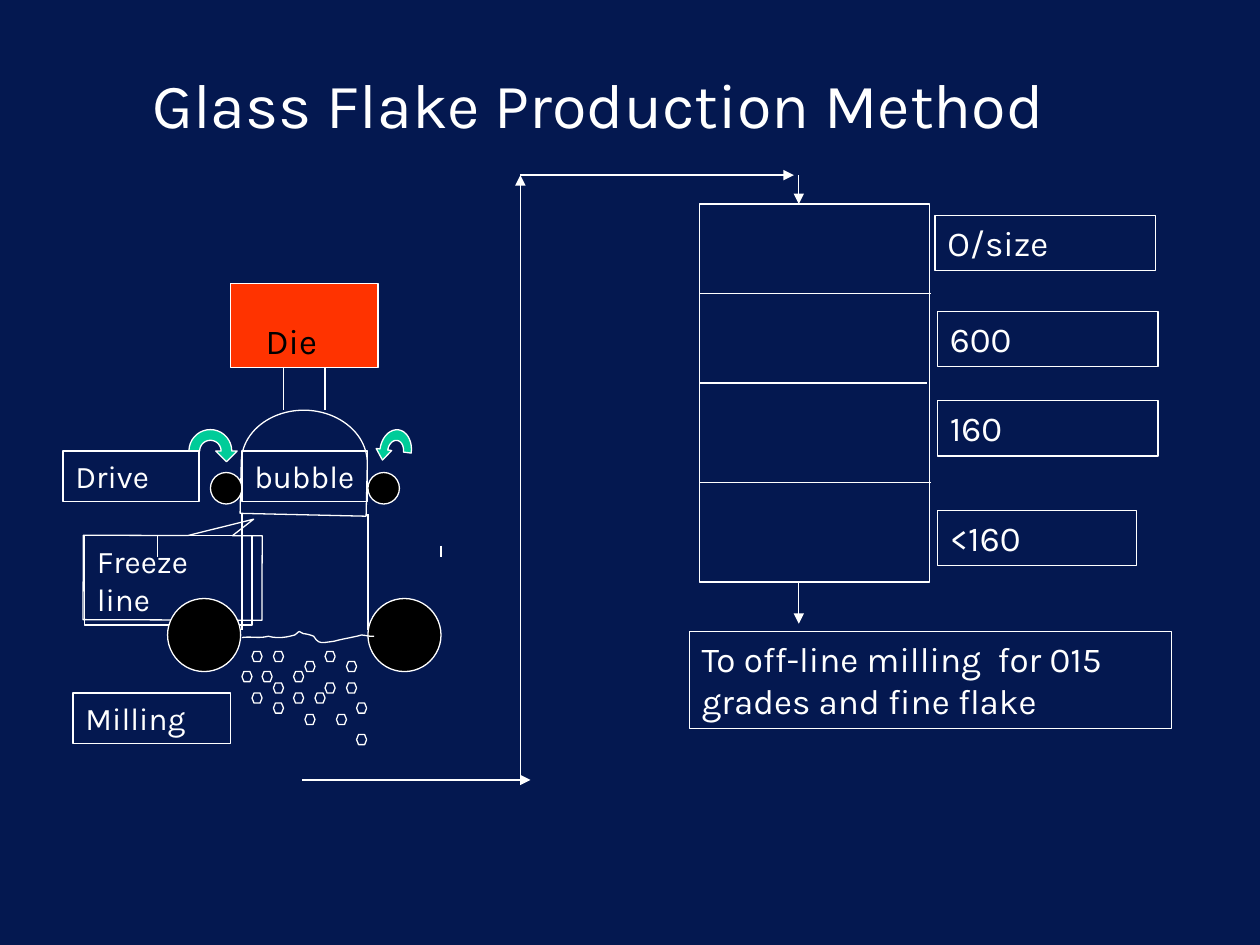
import math
from typing import NamedTuple, Optional

import pptx
import pptx.dml.color
import pptx.enum.shapes
import pptx.enum.text
import pptx.oxml
import pptx.oxml.ns
import pptx.util

Inches = pptx.util.Inches
SHAPES = pptx.enum.shapes.MSO_SHAPE
FONT = "Karla"
COLORS = {
    "background": "041850",
    "white": "FFFFFF",
    "black": "000000",
    "die": "FF3300",
    "arrow": "00CC99",
}


class Box(NamedTuple):
    left: float
    top: float
    width: float
    height: float


class Label(NamedTuple):
    text: str
    box: Box
    size: int = 18


class Line(NamedTuple):
    start: tuple[float, float]
    end: tuple[float, float]
    arrow: bool = False


def color(name: str):
    return pptx.dml.color.RGBColor.from_string(COLORS[name])


def lengths(values) -> list[int]:
    return [Inches(value) for value in values]


def style_shape(shape, fill: Optional[str] = None) -> None:
    shape.shadow.inherit = False
    if fill:
        shape.fill.solid()
        shape.fill.fore_color.rgb = color(fill)
    else:
        shape.fill.background()
    shape.line.color.rgb = color("white")
    shape.line.width = pptx.util.Pt(0.75)


def add_shape(slide, kind, box: Box, fill: Optional[str] = None, rotation: float = 0):
    shape = slide.shapes.add_shape(kind, *lengths(box))
    style_shape(shape, fill)
    shape.rotation = rotation
    return shape


def write_text(shape, text: str, size: int, font_color: str = "white") -> None:
    frame = shape.text_frame
    frame.text = text
    frame.word_wrap = True
    frame.auto_size = pptx.enum.text.MSO_AUTO_SIZE.SHAPE_TO_FIT_TEXT
    frame.vertical_anchor = pptx.enum.text.MSO_ANCHOR.TOP
    paragraph = frame.paragraphs[0]
    paragraph.alignment = pptx.enum.text.PP_ALIGN.LEFT
    font = paragraph.runs[0].font
    font.name, font.size = FONT, pptx.util.Pt(size)
    font.color.rgb = color(font_color)


def add_label(slide, label: Label) -> None:
    shape = add_shape(slide, SHAPES.RECTANGLE, label.box)
    write_text(shape, label.text, label.size)


def add_line(slide, line: Line) -> None:
    connector = slide.shapes.add_connector(
        pptx.enum.shapes.MSO_CONNECTOR.STRAIGHT, *lengths(line.start + line.end))
    connector.line.color.rgb = color("white")
    connector.line.width = pptx.util.Pt(0.75)
    if connector.line.fill is not None and line.arrow:
        outline = connector.line._get_or_add_ln()
        outline.append(pptx.oxml.parse_xml(
            f'<a:tailEnd {pptx.oxml.ns.nsdecls("a")} type="triangle"/>'))
    connector._element.spPr.append(pptx.oxml.parse_xml(
        f'<a:effectLst {pptx.oxml.ns.nsdecls("a")}/>'))


def add_outline(slide, points, close: bool, fill: Optional[str] = None) -> None:
    start, *others = [tuple(lengths(point)) for point in points]
    builder = slide.shapes.build_freeform(*start)
    builder.add_line_segments(others, close=close)
    style_shape(builder.convert_to_shape(), fill)


def add_turn_arrow(slide, center: tuple[float, float], radius_x: float,
                   mirror: int = 1, rotation: float = 0) -> None:
    """Draw a half-circle arrow, in units of its outer radius, then place it."""
    angles = [math.radians(degrees) for degrees in range(0, 181, 10)]
    outline = [(math.cos(a) / 2, -math.sin(a) / 2) for a in angles]
    outline += [(math.cos(a), -math.sin(a)) for a in reversed(angles)]
    outline += [(1.25, 0), (0.75, 0.5), (0.25, 0)]
    turn = math.radians(rotation)
    points = []
    for x, y in outline:
        x, y = x * radius_x * mirror, y * 0.17
        points.append((center[0] + x * math.cos(turn) - y * math.sin(turn),
                       center[1] + x * math.sin(turn) + y * math.cos(turn)))
    add_outline(slide, points, True, "arrow")


def sample_curve(start, *segments, steps: int = 6) -> list[tuple[float, float]]:
    """Follow cubic segments, each given as two controls and an end."""
    points = [start]
    for first, second, end in segments:
        for step in range(1, steps + 1):
            t = step / steps
            weights = ((1 - t) ** 3, 3 * t * (1 - t) ** 2, 3 * t * t * (1 - t), t ** 3)
            corners = (start, first, second, end)
            points.append(tuple(sum(w * corner[axis] for w, corner in zip(weights, corners))
                                for axis in (0, 1)))
        start = end
    return points


def add_title(slide) -> None:
    title = slide.shapes.title
    title.left, title.top, title.width, title.height = lengths((0.5, 0.36, 8.5, 0.81))
    write_text(title, "Glass Flake Production Method", 36)
    title.text_frame.auto_size = pptx.enum.text.MSO_AUTO_SIZE.NONE
    title.text_frame.vertical_anchor = pptx.enum.text.MSO_ANCHOR.BOTTOM
    title.text_frame.paragraphs[0].alignment = pptx.enum.text.PP_ALIGN.CENTER


def draw_bubble_machine(slide) -> None:
    # Die, feed pipe and bubble walls
    add_shape(slide, SHAPES.RECTANGLE, Box(1.83, 2.25, 1.17, 0.67), "die")
    for x, top, bottom in ((2.25, 2.92, 3.25), (2.58, 2.92, 3.25), (3.5, 4.33, 4.42),
                           (2.92, 4.08, 5), (1.92, 4.08, 5), (1.25, 4.25, 4.42)):
        add_line(slide, Line((x, top), (x, bottom)))
    add_shape(slide, SHAPES.FLOWCHART_DELAY, Box(2, 3.17, 0.83, 1), rotation=271.3)
    add_label(slide, Label("bubble", Box(1.92, 3.58, 1, 0.4)))

    # Drive rollers and freeze line callout
    for left in (1.67, 2.92):
        add_shape(slide, SHAPES.OVAL, Box(left, 3.75, 0.25, 0.25), "black")
    callout = add_shape(slide, SHAPES.RECTANGULAR_CALLOUT,
                        Box(0.66, 4.25, 1.42, 0.67), rotation=180.2)
    callout.adjustments[0], callout.adjustments[1] = -0.452, 0.697
    add_label(slide, Label("Freeze line", Box(0.67, 4.25, 1.33, 0.71)))
    add_turn_arrow(slide, (1.67, 3.58), 0.17)
    add_turn_arrow(slide, (3.14, 3.58), 0.125, mirror=-1, rotation=7.6)
    add_label(slide, Label("Drive", Box(0.5, 3.58, 1.08, 0.4)))

    # Milling rollers, flakes and the broken glass edge
    for left in (2.92, 1.33):
        add_shape(slide, SHAPES.OVAL, Box(left, 4.75, 0.58, 0.58), "black")
    add_label(slide, Label("Milling", Box(0.58, 5.5, 1.25, 0.4)))
    flake_rows = {5.17: (2, 2.17, 2.58), 5.25: (2.42, 2.75), 5.33: (1.92, 2.08, 2.33),
                  5.42: (2.17, 2.58, 2.75), 5.5: (2, 2.33, 2.5), 5.58: (2.17, 2.83),
                  5.67: (2.42, 2.67), 5.83: (2.83,)}
    for top, lefts in flake_rows.items():
        for left in lefts:
            add_shape(slide, SHAPES.FLOWCHART_PREPARATION, Box(left, top, 0.08, 0.08))
    glass_edge = sample_curve(
        (1.92, 5.06),
        ((1.99, 5.05), (2.06, 5.07), (2.13, 5.05)),
        ((2.2, 5.07), (2.27, 5.06), (2.34, 5.04)),
        ((2.39, 5), (2.36, 5.01), (2.41, 5.03)),
        ((2.44, 5.03), (2.49, 5.05), (2.49, 5.05)),
        ((2.53, 5.12), (2.56, 5.1), (2.65, 5.09)),
        ((2.72, 5.07), (2.8, 5.06), (2.87, 5.04)),
        ((2.95, 5.05), (2.91, 5.05), (2.97, 5.05)))
    add_outline(slide, glass_edge, False)
    die_text = slide.shapes.add_textbox(*lengths((2.01, 2.49, 0.87, 0.44)))
    write_text(die_text, "Die", 20, "black")


def draw_sieve(slide) -> None:
    # Sieve stack
    add_shape(slide, SHAPES.RECTANGLE, Box(5.55, 1.62, 1.83, 3))
    for y, right in ((2.33, 7.39), (3.04, 7.36), (3.83, 7.39)):
        add_line(slide, Line((5.55, y), (right, y)))

    # Grade labels
    for label in (
        Label("O/size", Box(7.42, 1.71, 1.75, 0.44), 20),
        Label("600", Box(7.44, 2.47, 1.75, 0.44), 20),
        Label("160", Box(7.44, 3.18, 1.75, 0.44), 20),
        Label("<160", Box(7.44, 4.05, 1.58, 0.44), 20),
        Label("To off-line milling  for 015 grades and fine flake",
              Box(5.47, 5.01, 3.83, 0.77), 20),
    ):
        add_label(slide, label)


def draw_flow(slide) -> None:
    for start, end in (((2.4, 6.19), (4.21, 6.19)), ((4.13, 6.19), (4.13, 1.39)),
                       ((4.13, 1.39), (6.3, 1.39)), ((6.34, 1.39), (6.34, 1.62)),
                       ((6.34, 4.62), (6.34, 4.95))):
        add_line(slide, Line(start, end, arrow=True))


def main() -> None:
    presentation = pptx.Presentation()
    presentation.slide_width, presentation.slide_height = lengths((10, 7.5))
    slide = presentation.slides.add_slide(presentation.slide_layouts[5])
    slide.background.fill.solid()
    slide.background.fill.fore_color.rgb = color("background")
    add_title(slide)
    draw_bubble_machine(slide)
    draw_sieve(slide)
    draw_flow(slide)
    presentation.save("out.pptx")


if __name__ == "__main__":
    main()
